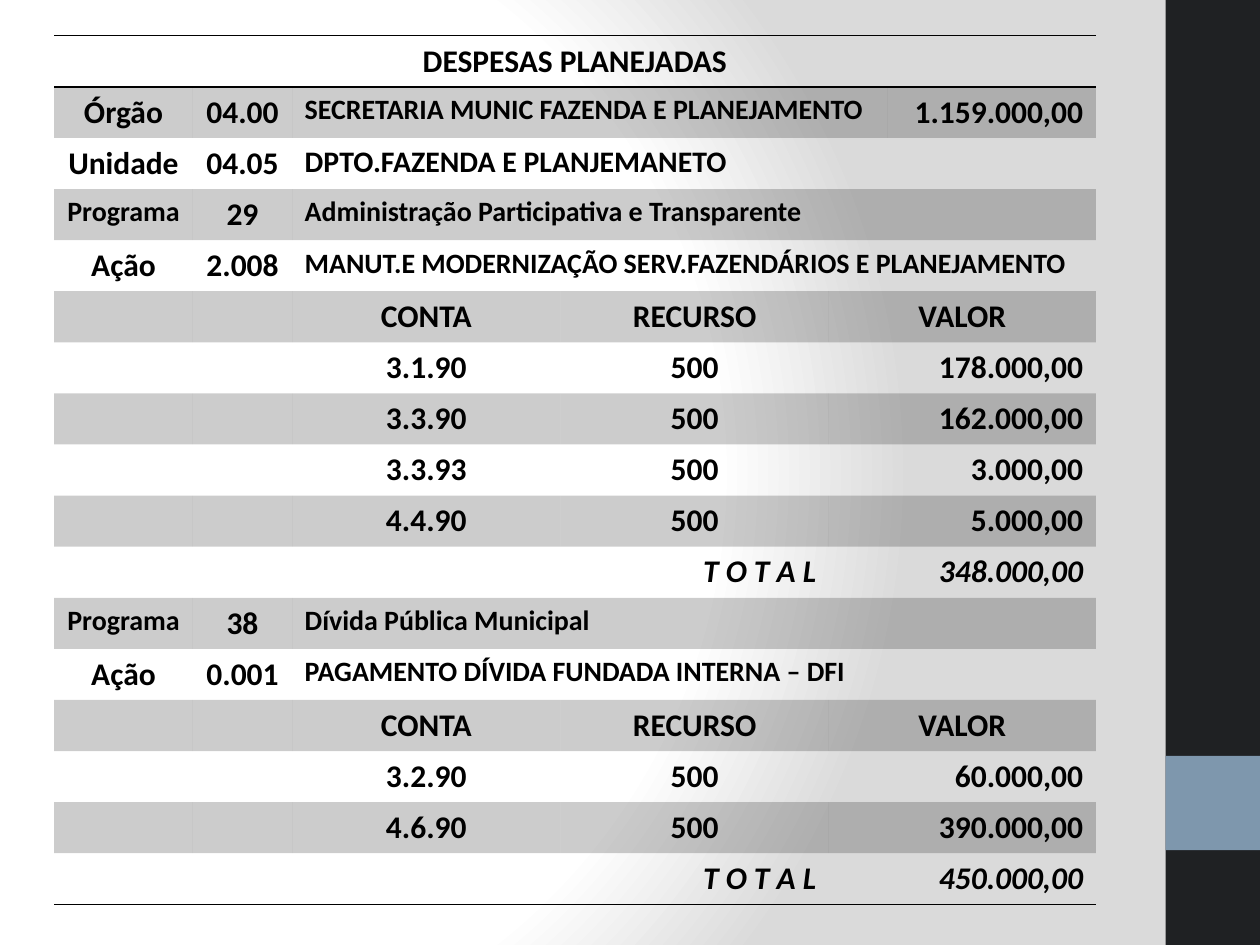
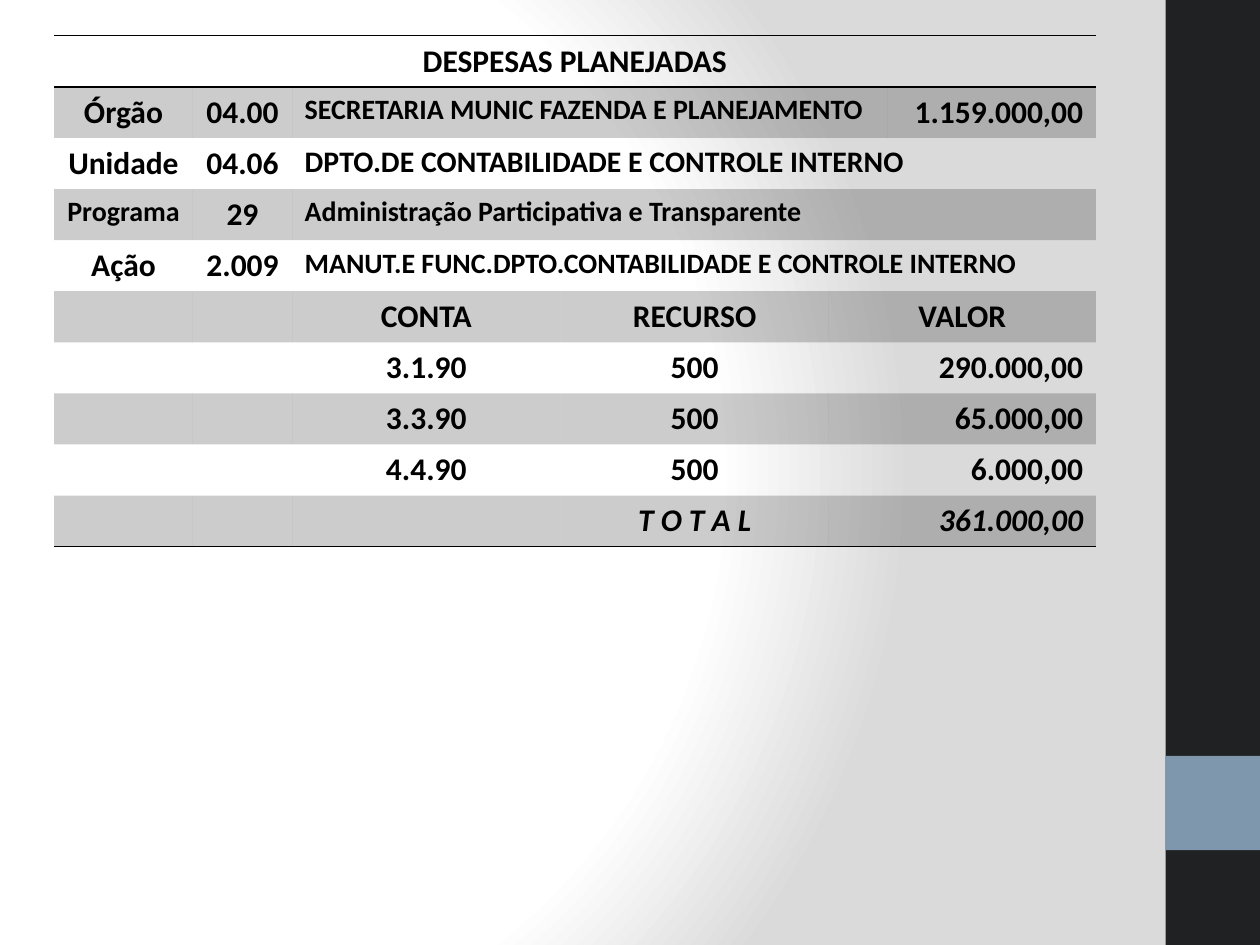
import pptx
import pptx.util
import pptx.dml.color
import pptx.enum.shapes
import pptx.enum.text
from lxml import etree
from pptx.oxml.ns import qn

Cm = pptx.util.Cm
Pt = pptx.util.Pt
ALIGN = pptx.enum.text.PP_ALIGN

TITLE = ("title", "DESPESAS PLANEJADAS")
ORGAN = ("organ", "Órgão", "04.00", "SECRETARIA MUNIC FAZENDA E PLANEJAMENTO", "1.159.000,00")
PROG = ("prog", "Programa", "29", "Administração Participativa e Transparente")
HEAD = ("head", "CONTA", "RECURSO", "VALOR")

SLIDES = [
    [
        TITLE,
        ORGAN,
        ("unit", "Unidade", "04.05", "DPTO.FAZENDA E PLANJEMANETO"),
        PROG,
        ("act", "Ação", "2.008", "MANUT.E MODERNIZAÇÃO SERV.FAZENDÁRIOS E PLANEJAMENTO"),
        HEAD,
        ("item", "3.1.90", "500", "178.000,00"),
        ("item", "3.3.90", "500", "162.000,00"),
        ("item", "3.3.93", "500", "3.000,00"),
        ("item", "4.4.90", "500", "5.000,00"),
        ("total", "T O T A L", "348.000,00"),
        ("prog", "Programa", "38", "Dívida Pública Municipal"),
        ("act", "Ação", "0.001", "PAGAMENTO DÍVIDA FUNDADA INTERNA – DFI"),
        HEAD,
        ("item", "3.2.90", "500", "60.000,00"),
        ("item", "4.6.90", "500", "390.000,00"),
        ("total", "T O T A L", "450.000,00"),
    ],
    [
        TITLE,
        ORGAN,
        ("unit", "Unidade", "04.06", "DPTO.DE CONTABILIDADE E CONTROLE INTERNO"),
        PROG,
        ("act", "Ação", "2.009", "MANUT.E FUNC.DPTO.CONTABILIDADE E CONTROLE INTERNO"),
        HEAD,
        ("item", "3.1.90", "500", "290.000,00"),
        ("item", "3.3.90", "500", "65.000,00"),
        ("item", "4.4.90", "500", "6.000,00"),
        ("midsum", "T O T A L", "361.000,00"),
    ],
]

THEME = {
    "font": "Calibri",
    "ink": "000000",
    "side": "1F2123",
    "mark": "7E97AD",
    "glow": [(0, "FFFFFF"), (75, "FFFFFF"), (100, "DADADA")],
    "shade": 20,
    "rule": 1,
    "big": 18,
    "mid": 17,
    "small": 16,
}

LEFT, MID, RIGHT = ALIGN.LEFT, ALIGN.CENTER, ALIGN.RIGHT
CODE = (1, 1, MID, "big")
SUM = (4, 2, RIGHT, "big")
FORMS = {
    "title": [(0, 6, MID, "big")],
    "organ": [(0, 1, MID, "big"), CODE, (2, 3, LEFT, "small"), (5, 1, RIGHT, "big")],
    "unit": [(0, 1, MID, "big"), CODE, (2, 4, LEFT, "mid")],
    "prog": [(0, 1, MID, "small"), CODE, (2, 4, LEFT, "small")],
    "act": [(0, 1, MID, "big"), CODE, (2, 4, LEFT, "small")],
    "head": [(2, 1, MID, "big"), (3, 1, MID, "big"), (4, 2, MID, "big")],
    "item": [(2, 1, MID, "big"), (3, 1, MID, "big"), SUM],
    "total": [(3, 1, RIGHT, "big"), SUM],
    "midsum": [(3, 1, MID, "big"), SUM],
}
SLANT = ("total", "midsum")

COLS = [2.8, 2, 5.41, 5.41, 1.19, 4.19]
ROW = 1.03
LEAD, TOP = 1.09, 0.72
WIDE, HIGH = 25.4, 19.05
BAND = 1.9
PLAIN = "{2D5ABB26-0587-4C30-8999-92F81FD0307C}"


def tone(name):
    return pptx.dml.color.RGBColor.from_string(THEME[name])


def node(root, tag, **attrs):
    return etree.SubElement(root, qn(tag), attrs)


def glow(slide):
    slide.background.fill.gradient()
    grad = slide.element.find(".//" + qn("a:gradFill"))
    for part in list(grad):
        grad.remove(part)
    stops = node(grad, "a:gsLst")
    for place, color in THEME["glow"]:
        stop = node(stops, "a:gs", pos=str(place * 1000))
        node(stop, "a:srgbClr", val=color)
    ring = node(grad, "a:path", path="circle")
    node(ring, "a:fillToRect", l="20000", t="50000", r="100000", b="50000")


def band(slide, top, high, name):
    box = slide.shapes.add_shape(
        pptx.enum.shapes.MSO_SHAPE.RECTANGLE,
        Cm(WIDE - BAND), Cm(top), Cm(BAND), Cm(high))
    box.shadow.inherit = False
    box.fill.solid()
    box.fill.fore_color.rgb = tone(name)
    box.line.fill.background()


def rule(cell, side):
    line = node(cell._tc.get_or_add_tcPr(), side, w=str(Pt(THEME["rule"])))
    fill = node(line, "a:solidFill")
    node(fill, "a:srgbClr", val=THEME["ink"])


def shade(cell):
    cell.fill.solid()
    cell.fill.fore_color.rgb = tone("ink")
    color = cell._tc.tcPr.find(".//" + qn("a:solidFill") + "[last()]/" + qn("a:srgbClr"))
    for fill in cell._tc.tcPr.findall(qn("a:solidFill")):
        color = fill.find(qn("a:srgbClr"))
    node(color, "a:alpha", val=str(THEME["shade"] * 1000))


def write(cell, text, align, size, slant):
    cell.text_frame.text = text
    para = cell.text_frame.paragraphs[0]
    para.alignment = align
    font = para.runs[0].font
    font.name = THEME["font"]
    font.size = Pt(THEME[size])
    font.color.rgb = tone("ink")
    font.bold = True
    font.italic = slant


def ledger(slide, rows):
    frame = slide.shapes.add_table(
        len(rows), len(COLS), Cm(LEAD), Cm(TOP), Cm(sum(COLS)), Cm(ROW * len(rows)))
    table = frame.table
    table.first_row = table.horz_banding = False
    table._tbl.tblPr.find(qn("a:tableStyleId")).text = PLAIN
    for col, wide in zip(table.columns, COLS):
        col.width = Cm(wide)
    for num, (kind, *texts) in enumerate(rows):
        table.rows[num].height = Cm(ROW)
        for cell in table.rows[num].cells:
            if num == 0:
                rule(cell, "a:lnT")
            if num in (0, len(rows) - 1):
                rule(cell, "a:lnB")
            if num % 2:
                shade(cell)
            else:
                cell.fill.background()
        for text, (col, span, align, size) in zip(texts, FORMS[kind]):
            cell = table.cell(num, col)
            if span > 1:
                cell.merge(table.cell(num, col + span - 1))
            write(cell, text, align, size, kind in SLANT)


def main():
    deck = pptx.Presentation()
    deck.slide_width, deck.slide_height = Cm(WIDE), Cm(HIGH)
    for rows in SLIDES:
        slide = deck.slides.add_slide(deck.slide_layouts[6])
        glow(slide)
        band(slide, 0, HIGH, "side")
        band(slide, 15.24, BAND, "mark")
        ledger(slide, rows)
    deck.save("out.pptx")


if __name__ == "__main__":
    main()
